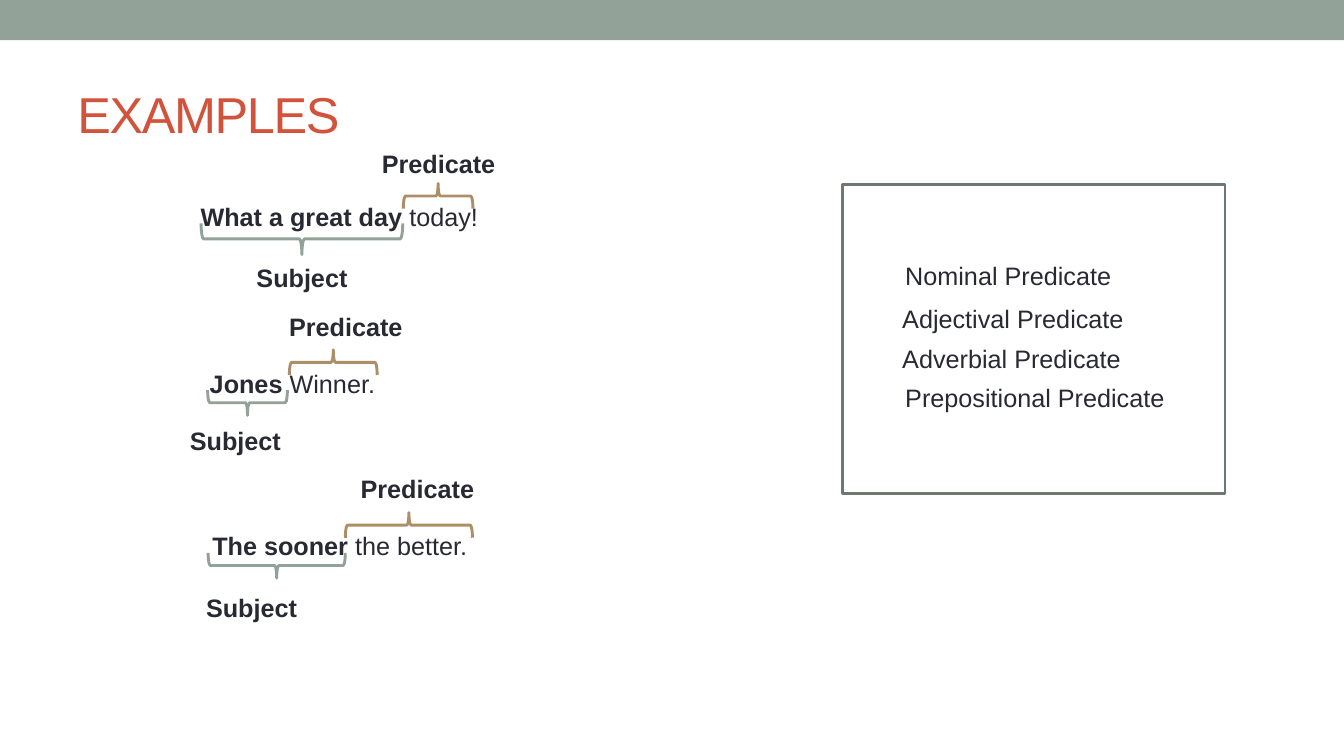
from pptx import Presentation
from pptx.dml.color import RGBColor
from pptx.enum.shapes import MSO_SHAPE as Shape
from pptx.enum.text import MSO_ANCHOR as Anchor, MSO_AUTO_SIZE as Fit, PP_ALIGN as Align
from pptx.util import Inches, Pt

SAGE = RGBColor(0x93, 0xA2, 0x99)
GOLD = RGBColor(0xAD, 0x8F, 0x67)
RED = RGBColor(0xD2, 0x53, 0x3C)
INK = RGBColor(0x29, 0x29, 0x34)
SLATE = RGBColor(0x6D, 0x78, 0x71)

LABELS = [
    ("Subject", 2.39, 2.55, 1.21),
    ("Predicate", 3.65, 1.42, 1.4),
    ("Predicate", 2.72, 3.04, 1.42),
    ("Subject", 1.26, 4.17, 2.15),
    ("Predicate", 3.46, 4.65, 1.36),
    ("Subject", 1.42, 5.83, 2.15),
]
PHRASES = [
    ("What a great day ", "today!", 1.41, 1.95, 3.91),
    ("Jones ", "Winner.", 0.99, 3.6, 3.82),
    ("The sooner ", "the better.", 1.46, 5.21, 3.82),
]
BRACES = [
    (2.84, 1.37, 0.31, 2, 270, SAGE),
    (4.22, 1.6, 0.25, 0.69, 90, GOLD),
    (2.33, 3.6, 0.25, 0.79, 270, SAGE),
    (3.18, 3.16, 0.25, 0.87, 90, GOLD),
    (2.62, 4.93, 0.25, 1.36, 270, SAGE),
    (3.93, 4.58, 0.25, 1.26, 90, GOLD),
]
KINDS = [
    ("Nominal Predicate", 8.88, 2.53, 2.26),
    ("Adjectival Predicate", 8.85, 2.96, 2.42),
    ("Adverbial Predicate", 8.85, 3.36, 2.39),
    ("Prepositional Predicate", 8.88, 3.74, 2.89),
]


def add_text(slide, text, x, y, w, h=0.4, size=18, color=INK, bold=False,
             align=Align.LEFT, wrap=True):
    """Add a one-line text box and return its paragraph."""
    box = slide.shapes.add_textbox(Inches(x), Inches(y), Inches(w), Inches(h))
    frame = box.text_frame
    frame.word_wrap = wrap
    frame.auto_size = Fit.NONE if wrap else Fit.SHAPE_TO_FIT_TEXT
    frame.vertical_anchor = Anchor.MIDDLE
    para = frame.paragraphs[0]
    para.alignment = align
    para.add_run().text = text
    font = para.font
    font.name, font.size, font.bold = "Arial", Pt(size), bold
    font.color.rgb = color
    return para


def add_title(slide, text):
    """Add the slide title with tightened letters."""
    para = add_text(slide, text, 0.67, 0.58, 12, 1.08, size=36, color=RED)
    para.runs[0].font._element.set("spc", "-100")


def add_phrase(slide, subject, rest, x, y, w):
    """Add a phrase whose subject is bold."""
    para = add_text(slide, subject, x, y, w, align=Align.CENTER)
    para.runs[0].font.bold = True
    para.add_run().text = rest


def add_bar(slide):
    """Add the filled band along the top edge."""
    bar = slide.shapes.add_shape(Shape.RECTANGLE, 0, 0, Inches(13.33), Inches(0.4))
    bar.shadow.inherit = False
    bar.fill.solid()
    bar.fill.fore_color.rgb = SAGE
    bar.line.fill.background()


def add_outline(slide, kind, x, y, w, h, turn, color):
    """Add an unfilled shape with a coloured line."""
    shape = slide.shapes.add_shape(kind, Inches(x), Inches(y), Inches(w), Inches(h))
    shape.shadow.inherit = False
    shape.rotation = turn
    shape.fill.background()
    shape.line.color.rgb = color
    shape.line.width = Pt(2.08)


def main():
    """Build the slide and save it."""
    deck = Presentation()
    deck.slide_width, deck.slide_height = Inches(13.33), Inches(7.5)
    slide = deck.slides.add_slide(deck.slide_layouts[6])
    add_bar(slide)
    add_title(slide, "EXAMPLES")
    for phrase in PHRASES:
        add_phrase(slide, *phrase)
    for brace in BRACES:
        add_outline(slide, Shape.LEFT_BRACE, *brace)
    for label in LABELS:
        add_text(slide, *label, bold=True, align=Align.CENTER)
    for kind in KINDS:
        add_text(slide, *kind, wrap=False)
    add_outline(slide, Shape.RECTANGLE, 8.36, 1.83, 3.79, 3.07, 0, SLATE)
    deck.save("out.pptx")


if __name__ == "__main__":
    main()
